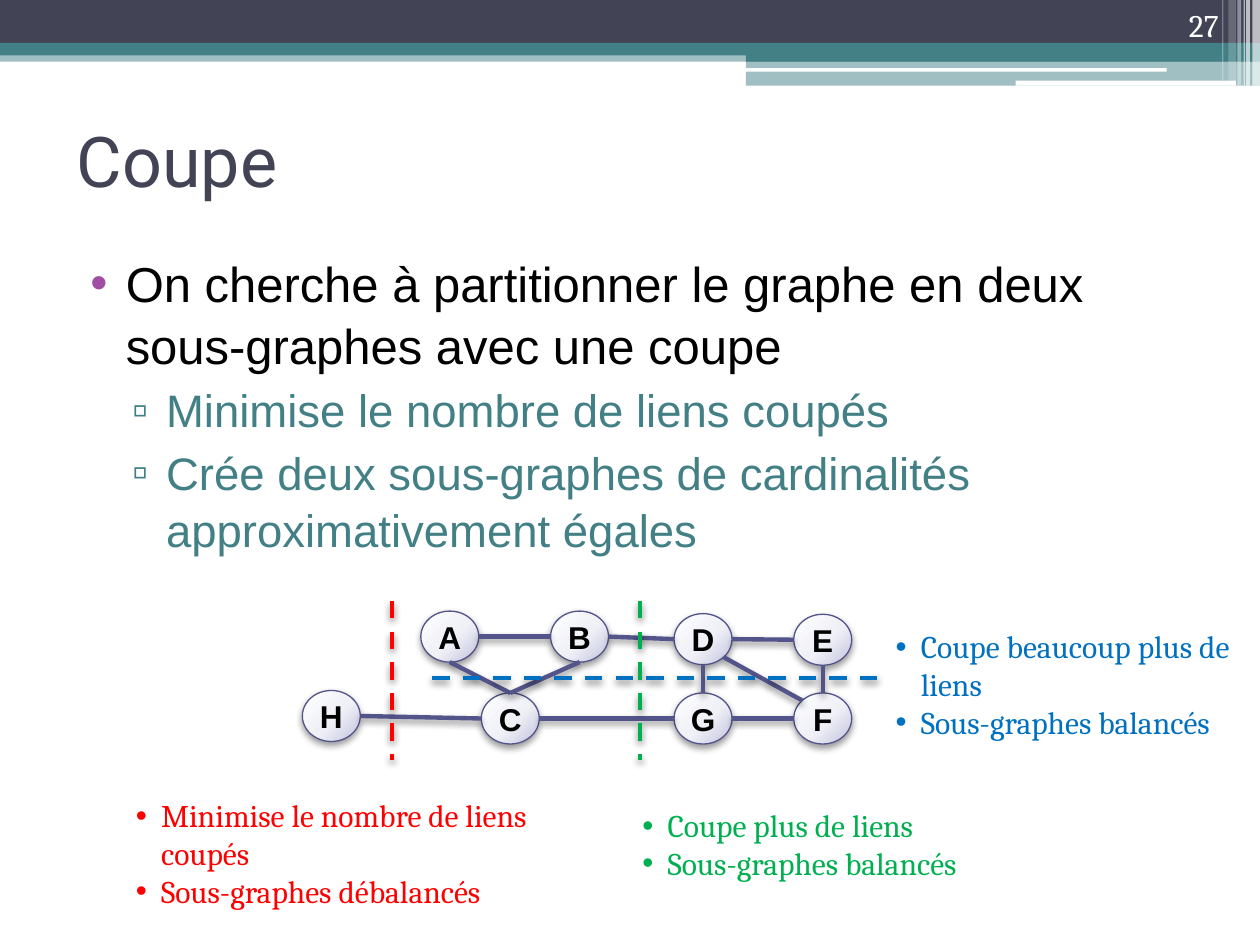
import pptx
import pptx.util
import pptx.dml.color
import pptx.enum.shapes
import pptx.enum.text
import pptx.oxml
import pptx.oxml.ns

MSO = pptx.enum.shapes.MSO_SHAPE
ANCHOR = pptx.enum.text.MSO_ANCHOR
ALIGN = pptx.enum.text.PP_ALIGN
qn = pptx.oxml.ns.qn
NS = pptx.oxml.ns.nsdecls("a")

COLS, ROWS = 100, 75  # slide grid with square cells
CELL = 0.1            # inches per cell
COLORS = {
    "navy": "424456", "teal": "438086", "white": "FFFFFF", "black": "000000",
    "violet": "A04DA3", "edge": "53548A", "red": "FF0000", "green": "00B050",
    "blue": "0070C0", "node_in": "FEFEFE", "node_mid": "F0F1F7", "node_out": "C2C2DD",
}


def grid(*cells):
    return [pptx.util.Inches(c * CELL) for c in cells]


def rgb(name):
    return pptx.dml.color.RGBColor.from_string(COLORS[name])


def add_xml(parent, xml):
    child = pptx.oxml.parse_xml(xml)
    parent.append(child)
    return child


def add_shadow(sp, alpha):
    """Soft shadow falling straight down."""
    add_xml(sp._element.spPr, f'<a:effectLst {NS}><a:outerShdw blurRad="51000" dist="25400" '
            f'dir="5400000" rotWithShape="0"><a:srgbClr val="{COLORS["black"]}">'
            f'<a:alpha val="{alpha * 1000}"/></a:srgbClr></a:outerShdw></a:effectLst>')


def add_run(p, text, font, size, color, bold=False):
    r = p.add_run()
    r.text = text
    r.font.name, r.font.size, r.font.bold = font, pptx.util.Pt(size), bold
    r.font.color.rgb = rgb(color)


def set_bullet(p, char, color, left, hang):
    pPr = p._p.get_or_add_pPr()
    pPr.set("marL", str(grid(left)[0]))
    pPr.set("indent", str(-grid(hang)[0]))
    add_xml(pPr, f'<a:buClr {NS}><a:srgbClr val="{COLORS[color]}"/></a:buClr>')
    add_xml(pPr, f'<a:buFont {NS} typeface="Arial"/>')
    add_xml(pPr, f'<a:buChar {NS} char="{char}"/>')


def add_text_frame(slide, box):
    tf = slide.shapes.add_textbox(*grid(*box)).text_frame
    tf.word_wrap = True
    return tf


def paragraphs(tf, items):
    """Pair each item with a paragraph, reusing the first one."""
    for i, item in enumerate(items):
        yield (tf.add_paragraph() if i else tf.paragraphs[0]), item


def add_line(slide, start, end, color, dashed=False):
    line = slide.shapes.add_connector(
        pptx.enum.shapes.MSO_CONNECTOR.STRAIGHT, *grid(*start, *end))
    line.line.color.rgb = rgb(color)
    line.line.width = pptx.util.Pt(2.5)
    if dashed:
        line.line.dash_style = pptx.enum.dml.MSO_LINE.DASH
    add_shadow(line, 45)


def add_header(slide, box, number):
    left, top, width, _ = box
    accent = 59.2  # where the right-hand bands start
    bars = [  # x, y, width, height, colour, opacity
        (0, 4, width, 0.9, "teal", 50),
        (0, 0, width, 3.4, "navy", 100),
        (0, 3.4, width, 1, "teal", 100),
        (accent, 3.9, width - accent, 1, "teal", 100),
        (accent, 4.8, width - accent, 2, "teal", 50),
        (59.1, 5.4, 33.5, 0.3, "white", 100),
        (80.6, 6.4, 17.5, 0.4, "white", 100),
    ]
    stripes = [  # x, width, height, opacity
        (99.4, 0.6, 6.8, 65), (98.9, 0.3, 6.8, 65), (98.7, 0.1, 6.8, 60),
        (98.2, 0.3, 6.8, 40), (97.5, 0.6, 6.4, 20), (97, 0.1, 6.4, 30),
    ]
    bars += [(x, 0, w, h, "white", a) for x, w, h, a in stripes]
    for x, y, w, h, color, opacity in bars:
        sp = slide.shapes.add_shape(MSO.RECTANGLE, *grid(left + x, top + y, w, h))
        sp.shadow.inherit = False
        sp.line.fill.background()
        sp.fill.solid()
        sp.fill.fore_color.rgb = rgb(color)
        if opacity < 100:
            clr = sp._element.spPr.find(".//" + qn("a:srgbClr"))
            add_xml(clr, f'<a:alpha {NS} val="{opacity * 1000}"/>')
    # Slide number
    tf = add_text_frame(slide, (left + 89.4, top, 8.3, 4))
    tf.vertical_anchor = ANCHOR.BOTTOM
    tf.paragraphs[0].alignment = ALIGN.RIGHT
    add_run(tf.paragraphs[0], number, "Cambria", 18, "white")


def add_title(slide, box, text):
    title = slide.shapes.title
    title.left, title.top, title.width, title.height = grid(*box)
    tf = title.text_frame
    tf.vertical_anchor = ANCHOR.MIDDLE
    tf.paragraphs[0].alignment = ALIGN.LEFT
    add_run(tf.paragraphs[0], text, "Roboto", 40, "navy")


def add_body(slide, box, items):
    styles = [  # bullet, bullet colour, indent, hang, size, text colour
        ("•", "violet", 4, 2.8, 28, "black"),
        ("▫", "teal", 7.2, 2.7, 26, "teal"),
    ]
    for p, (level, text) in paragraphs(add_text_frame(slide, box), items):
        char, bullet_color, left, hang, size, color = styles[level]
        p.level = level
        p.space_before = pptx.util.Pt(3)
        p.line_spacing = 1.05
        set_bullet(p, char, bullet_color, left, hang)
        add_run(p, text, "Arial", size, color)


def add_note(slide, box, color, lines):
    for p, text in paragraphs(add_text_frame(slide, box), lines):
        set_bullet(p, "•", color, 2, 2)
        add_run(p, text, "Cambria", 18, color)


def add_node(slide, box, label):
    sp = slide.shapes.add_shape(MSO.OVAL, *grid(*box))
    sp.line.color.rgb = rgb("edge")
    sp.line.width = pptx.util.Pt(0.75)
    sp.fill.solid()
    spPr = sp._element.spPr
    stops = "".join(f'<a:gs pos="{pos}000"><a:srgbClr val="{COLORS[c]}"/></a:gs>'
                    for pos, c in ((0, "node_in"), (55, "node_mid"), (100, "node_out")))
    spPr.replace(spPr.find(qn("a:solidFill")), pptx.oxml.parse_xml(
        f'<a:gradFill {NS} rotWithShape="1"><a:gsLst>{stops}</a:gsLst><a:path path="circle">'
        '<a:fillToRect l="-40000" t="-90000" r="140000" b="190000"/></a:path></a:gradFill>'))
    add_shadow(sp, 40)
    tf = sp.text_frame
    tf.margin_left = tf.margin_right = tf.margin_top = tf.margin_bottom = 0
    tf.word_wrap = False
    tf.vertical_anchor = ANCHOR.MIDDLE
    tf.paragraphs[0].alignment = ALIGN.CENTER
    add_run(tf.paragraphs[0], label, "Arial", 18, "black", bold=True)


def add_graph(slide, box):
    left, top, width, height = box
    node_w, node_h = 4.6, 4.05
    nodes = {"A": (9.4, 0.8), "B": (19.7, 0.8), "C": (14.2, 7.3), "D": (29.5, 1),
             "E": (39, 1.05), "F": (39, 7.3), "G": (29.5, 7.3), "H": (0, 7.1)}
    sites = {"left": (0, 0.5), "right": (1, 0.5), "top": (0.5, 0), "bottom": (0.5, 1),
             "upper left": (0.15, 0.15), "lower right": (0.85, 0.85)}
    edges = [("A", "right", "B", "left"), ("A", "bottom", "C", "top"),
             ("C", "top", "B", "bottom"), ("D", "left", "B", "right"),
             ("E", "left", "D", "right"), ("G", "top", "D", "bottom"),
             ("F", "top", "E", "bottom"), ("F", "left", "G", "right"),
             ("F", "upper left", "D", "lower right"),
             ("H", "right", "C", "left"), ("C", "right", "G", "left")]

    def site(node, side):
        (x, y), (fx, fy) = nodes[node], sites[side]
        return left + x + fx * node_w, top + y + fy * node_h

    for label, (x, y) in nodes.items():
        add_node(slide, (left + x, top + y, node_w, node_h), label)
    for a, side_a, b, side_b in edges:
        add_line(slide, site(a, side_a), site(b, side_b), "edge")
    # Candidate cuts
    for x, color in ((7.1, "red"), (26.8, "green")):
        add_line(slide, (left + x, top), (left + x, top + height), color, dashed=True)
    add_line(slide, (left + 10.3, top + 6.1), (left + width, top + 6.1), "blue", dashed=True)


def main():
    prs = pptx.Presentation()
    prs.slide_width, prs.slide_height = grid(COLS, ROWS)
    slide = prs.slides.add_slide(prs.slide_layouts[5])
    add_header(slide, (0, 0, COLS, 6.8), "27")
    add_title(slide, (5.1, 6.8, 90, 11.7), "Coupe")
    add_body(slide, (5, 19.4, 90, 52.5), [
        (0, "On cherche à partitionner le graphe en deux sous-graphes avec une coupe"),
        (1, "Minimise le nombre de liens coupés"),
        (1, "Crée deux sous-graphes de cardinalités approximativement égales")])
    add_graph(slide, (24, 47.7, 45.7, 12.6))
    # Remarks on each cut
    add_note(slide, (9.8, 62.7, 33.9, 10.1), "red",
             ["Minimise le nombre de liens coupés", "Sous-graphes débalancés"])
    add_note(slide, (50, 63.5, 29.9, 7.1), "green",
             ["Coupe plus de liens", "Sous-graphes balancés"])
    add_note(slide, (70.1, 49.3, 29.9, 10.1), "blue",
             ["Coupe beaucoup plus de liens", "Sous-graphes balancés"])
    prs.save("out.pptx")


if __name__ == "__main__":
    main()
